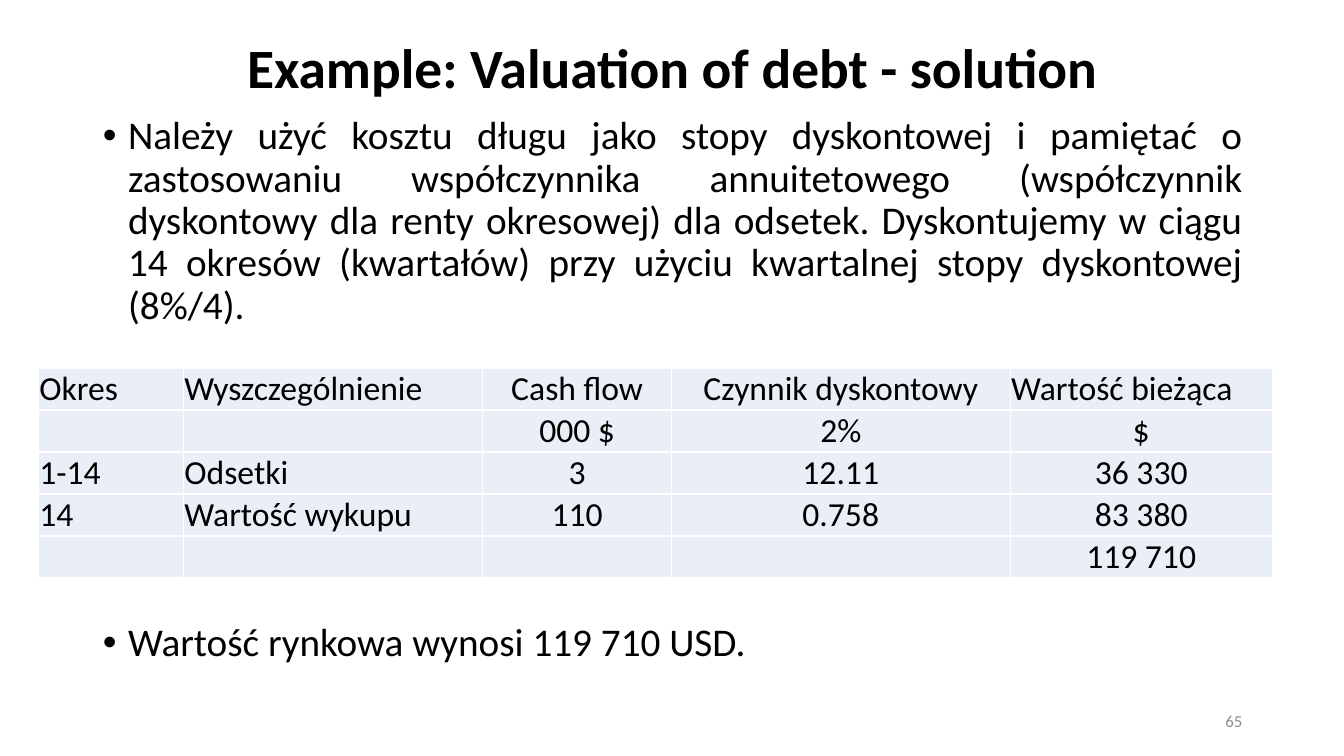
from lxml import etree
from pptx import Presentation
from pptx import util as u
from pptx.dml.color import RGBColor
from pptx.enum import text
from pptx.oxml import ns

PX = 9144  # 100 px to the inch
FONT = "Calibri"
HUES = {"ink": "000000", "grey": "8C8C8C", "cell": "EAEFF7", "rule": "FFFFFF"}
LEFT, MID, RIGHT, JUST = (text.PP_ALIGN.LEFT, text.PP_ALIGN.CENTER,
                          text.PP_ALIGN.RIGHT, text.PP_ALIGN.JUSTIFY)

COLS = [144, 297, 187, 336, 260]
ROW = 41
CELLS = [
    ["Okres", "Wyszczególnienie", "Cash flow", "Czynnik dyskontowy", "Wartość bieżąca"],
    ["", "", "000 $", "2%", "$"],
    ["1-14", "Odsetki", "3", "12.11", "36 330"],
    ["14", "Wartość wykupu", "110", "0.758", "83 380"],
    ["", "", "", "", "119 710"],
]
# Wording and the space before it in points
POINTS = [
    ("Należy użyć kosztu długu jako stopy dyskontowej i pamiętać o zastosowaniu "
     "współczynnika annuitetowego (współczynnik dyskontowy dla renty okresowej) "
     "dla odsetek. Dyskontujemy w ciągu 14 okresów (kwartałów) przy użyciu "
     "kwartalnej stopy dyskontowej (8%/4).", 10),
    ("Wartość rynkowa wynosi 119 710 USD.", 211),
]


def place(shape, *box):
    shape.left, shape.top, shape.width, shape.height = [n * PX for n in box]


def frame(shape, anchor):
    tf = shape.text_frame
    tf.word_wrap = True
    tf.auto_size = text.MSO_AUTO_SIZE.NONE
    tf.vertical_anchor = anchor
    return tf


def write(para, words, size, align, hue="ink", bold=False):
    para.alignment = align
    run = para.add_run()
    run.text = words
    font = run.font
    font.name, font.size, font.bold = FONT, u.Pt(size), bold
    font.color.rgb = RGBColor.from_string(HUES[hue])


def bullet(para):
    props = para._p.get_or_add_pPr()
    props.set("marL", str(25 * PX))
    props.set("indent", str(-25 * PX))
    etree.SubElement(props, ns.qn("a:buFont")).set("typeface", "Arial")
    etree.SubElement(props, ns.qn("a:buChar")).set("char", "•")


def border(cell):
    props = cell._tc.get_or_add_tcPr()
    for side in ("lnL", "lnR", "lnT", "lnB"):
        line = etree.SubElement(props, ns.qn("a:" + side), w=str(u.Pt(1)))
        fill = etree.SubElement(line, ns.qn("a:solidFill"))
        etree.SubElement(fill, ns.qn("a:srgbClr")).set("val", HUES["rule"])


def add_title(slide):
    title = slide.shapes.title
    place(title, 92, 43, 1150, 53)
    para = frame(title, text.MSO_ANCHOR.MIDDLE).paragraphs[0]
    para.line_spacing = 0.9
    write(para, "Example: Valuation of debt - solution", 39.6, MID, bold=True)


def add_list(slide):
    body = slide.placeholders[1]
    place(body, 92, 110, 1150, 585)
    tf = frame(body, text.MSO_ANCHOR.TOP)
    for i, (words, gap) in enumerate(POINTS):
        para = tf.add_paragraph() if i else tf.paragraphs[0]
        para.line_spacing = 0.9
        para.space_before = u.Pt(gap)
        bullet(para)
        write(para, words, 28, JUST)


def add_grid(slide):
    grid = slide.shapes.add_table(
        len(CELLS), len(COLS), 38 * PX, 365 * PX,
        sum(COLS) * PX, ROW * len(CELLS) * PX).table
    grid.first_row = grid.horz_banding = False
    for col, width in zip(grid.columns, COLS):
        col.width = width * PX
    for r, row in enumerate(CELLS):
        grid.rows[r].height = ROW * PX
        for c, words in enumerate(row):
            cell = grid.cell(r, c)
            cell.margin_left = cell.margin_right = cell.margin_top = PX
            cell.margin_bottom = 0
            border(cell)
            cell.fill.solid()
            cell.fill.fore_color.rgb = RGBColor.from_string(HUES["cell"])
            if words:
                flush = c < 2 or (r == 0 and c == 4)
                write(cell.text_frame.paragraphs[0], words, 24,
                      LEFT if flush else MID)


def add_page(slide):
    box = slide.shapes.add_textbox(942 * PX, 695 * PX, 300 * PX, 40 * PX)
    tf = frame(box, text.MSO_ANCHOR.MIDDLE)
    write(tf.paragraphs[0], "65", 12, RIGHT, "grey")


def main():
    deck = Presentation()
    deck.slide_width, deck.slide_height = 1333 * PX, 750 * PX
    slide = deck.slides.add_slide(deck.slide_layouts[1])
    add_title(slide)
    add_list(slide)
    add_page(slide)
    add_grid(slide)
    deck.save("out.pptx")


if __name__ == "__main__":
    main()
